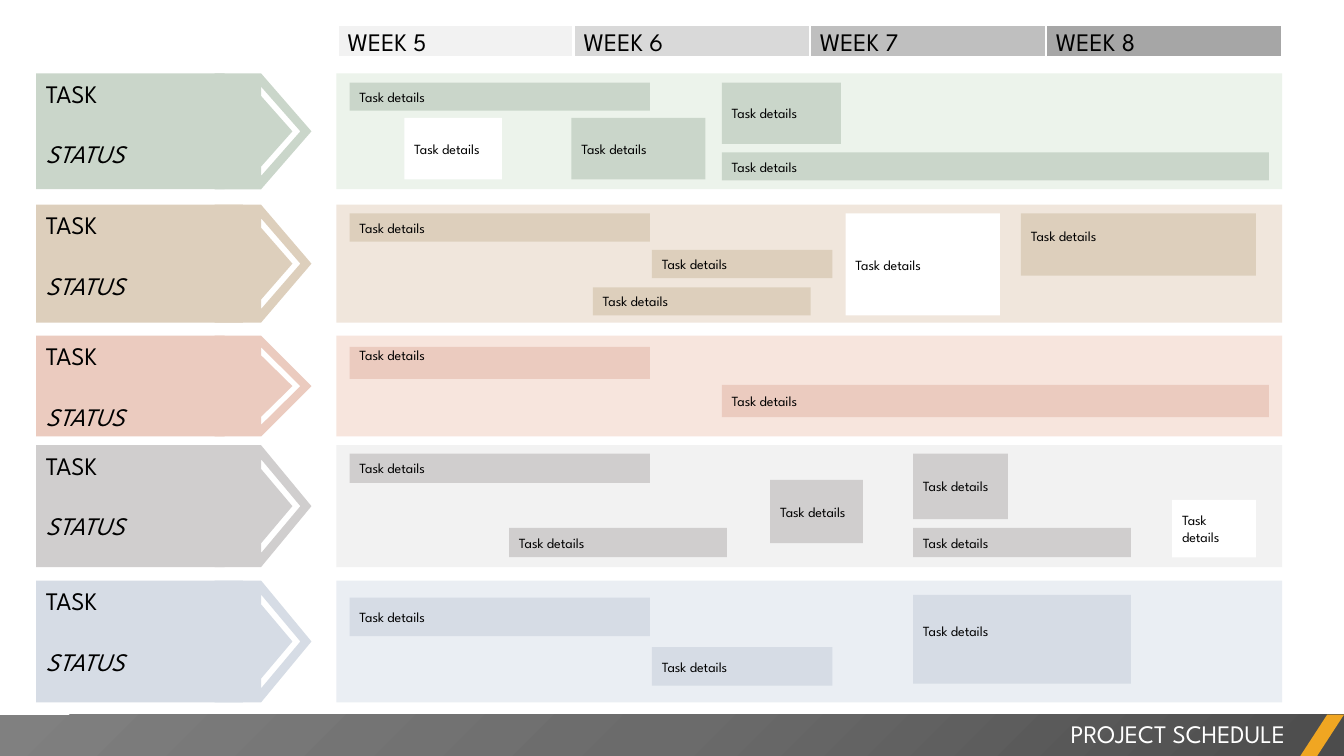
import pptx
import pptx.dml.color
import pptx.enum.shapes
import pptx.enum.text
import pptx.oxml
import pptx.oxml.ns
import pptx.util

Cm, Pt = pptx.util.Cm, pptx.util.Pt
SHAPE = pptx.enum.shapes.MSO_SHAPE
ANCHOR = pptx.enum.text.MSO_ANCHOR
ALIGN = pptx.enum.text.PP_ALIGN

FONT = "League Spartan"
TITLE = "PROJECT SCHEDULE"
TASK, STATUS, DETAILS = "TASK", "STATUS", "Task details"
WEEKS = [("WEEK 5", "F2F2F2"), ("WEEK 6", "D9D9D9"), ("WEEK 7", "BFBFBF"), ("WEEK 8", "A6A6A6")]
WHITE, BLACK, ACCENT = "FFFFFF", "000000", "F0A622"
BAR_STOPS = [(0, "4C4C4C"), (50, "6B6B6B"), (100, "808080")]

# Lane: top, height, label width, strong colour, pale colour, details.
# Detail: left, top, width, height and an optional style, "white" or "raised".
LANES = [
    (1.85, 2.92, 4.75, "CAD6CA", "ECF3EB", [
        (8.81, 2.08, 7.57, 0.71), (14.4, 2.97, 3.38, 1.55), (10.19, 2.97, 2.46, 1.55, "white"),
        (18.19, 2.08, 3, 1.55), (18.19, 3.84, 13.79, 0.71)]),
    (5.16, 2.97, 5.21, "DDCFBC", "F0E6DC", [
        (8.81, 5.38, 7.57, 0.71), (21.31, 5.38, 3.89, 2.57, "white"),
        (25.73, 5.38, 5.92, 1.57, "raised"), (16.43, 6.3, 4.55, 0.71), (14.94, 7.24, 5.49, 0.71)]),
    (8.46, 2.54, 4.75, "EBCBBF", "F7E5DD", [
        (8.81, 8.74, 7.57, 0.81, "raised"), (18.19, 9.7, 13.79, 0.81)]),
    (11.22, 3.07, 4.75, "D0CECE", "F2F2F2", [
        (8.81, 11.43, 7.57, 0.74), (29.54, 12.6, 2.11, 1.45, "white"), (23.01, 11.43, 2.39, 1.65),
        (19.41, 12.09, 2.34, 1.6), (12.83, 13.3, 5.49, 0.74), (23.01, 13.3, 5.49, 0.74)]),
    (14.63, 3.07, 5.21, "D6DCE5", "EAEEF3", [
        (8.81, 15.06, 7.57, 0.97), (16.43, 16.31, 4.55, 0.97),
        (23.01, 14.99, 5.49, 2.24, "raised")]),
]
LABEL_LEFT, PANEL_LEFT, PANEL_WIDTH = 0.91, 8.48, 23.83
# Chevron outline and its cut-out: x in cm, y as a share of the lane height
ARROW = [(6.58, 0), (5.41, 0), (5.41, 1), (6.58, 1), (7.85, 0.5)]
NOTCH = [(6.58, 0.805), (7.37, 0.5), (6.58, 0.195), (6.58, 0.115), (7.57, 0.5), (6.58, 0.885)]


def rgb(value):
    return pptx.dml.color.RGBColor.from_string(value)


def paint(shape, colour):
    shape.shadow.inherit = False
    shape.line.fill.background()
    shape.fill.solid()
    shape.fill.fore_color.rgb = rgb(colour)


def add_block(shapes, left, top, width, height, colour, kind=SHAPE.RECTANGLE):
    block = shapes.add_shape(kind, Cm(left), Cm(top), Cm(width), Cm(height))
    paint(block, colour)
    return block


def write(frame, lines, size, colour=BLACK, anchor=ANCHOR.TOP, align=ALIGN.LEFT):
    frame.word_wrap = True
    frame.vertical_anchor = anchor
    frame.text = "\n".join(lines)
    for paragraph in frame.paragraphs:
        paragraph.alignment = align
        paragraph.font.name = FONT
        paragraph.font.size = Pt(size)
        paragraph.font.color.rgb = rgb(colour)


def add_chevron(shapes, top, height, colour):
    arrow, notch = [[(Cm(x), Cm(top + y * height)) for x, y in outline]
                    for outline in (ARROW, NOTCH)]
    builder = shapes.build_freeform(*arrow[0])
    builder.add_line_segments(arrow[1:])
    builder.move_to(*notch[0])
    builder.add_line_segments(notch[1:])
    paint(builder.convert_to_shape(), colour)


def add_lane(slide, top, height, label_width, strong, pale, details):
    shapes = slide.shapes.add_group_shape().shapes
    label = add_block(shapes, LABEL_LEFT, top, label_width, height, strong).text_frame
    write(label, [TASK, STATUS], 18)
    status = label.paragraphs[1]
    status.space_before = Pt(21.5)
    status.font.italic = True
    add_chevron(shapes, top, height, strong)
    add_block(shapes, PANEL_LEFT, top, PANEL_WIDTH, height, pale)
    for left, detail_top, width, detail_height, *style in details:
        colour = WHITE if "white" in style else strong
        detail = add_block(shapes, left, detail_top, width, detail_height, colour).text_frame
        write(detail, [DETAILS], 10, anchor=ANCHOR.MIDDLE)
        if "raised" in style:
            detail.margin_bottom = Pt(15.6)


def add_borders(cell):
    properties = cell._tc.get_or_add_tcPr()
    for position, side in enumerate(("lnL", "lnR", "lnT", "lnB")):
        properties.insert(position, pptx.oxml.parse_xml(
            f'<a:{side} {pptx.oxml.ns.nsdecls("a")} w="28575"><a:solidFill>'
            f'<a:srgbClr val="{WHITE}"/></a:solidFill></a:{side}>'))


def add_weeks(slide):
    table = slide.shapes.add_table(
        1, len(WEEKS), Cm(8.51), Cm(0.61), Cm(23.8), Cm(0.84)).table
    table.first_row = table.horz_banding = False
    for cell, (week, colour) in zip(table.rows[0].cells, WEEKS):
        write(cell.text_frame, [week], 18)
        cell.vertical_anchor = ANCHOR.BOTTOM
        cell.margin_left, cell.margin_right = Cm(0.25), Cm(0.03)
        cell.margin_top, cell.margin_bottom = Cm(0.03), 0
        cell.fill.solid()
        cell.fill.fore_color.rgb = rgb(colour)
        add_borders(cell)


def add_footer(slide):
    bar = add_block(slide.shapes, 0, 18.01, 33.87, 1.04, BAR_STOPS[0][1])
    stops = "".join(f'<a:gs pos="{share * 1000}"><a:srgbClr val="{colour}"/></a:gs>'
                    for share, colour in BAR_STOPS)
    gradient = pptx.oxml.parse_xml(
        f'<a:gradFill {pptx.oxml.ns.nsdecls("a")}><a:gsLst>{stops}</a:gsLst>'
        '<a:path path="circle"><a:fillToRect l="100000" t="100000"/></a:path></a:gradFill>')
    properties = bar.element.spPr
    properties.replace(properties.find(pptx.oxml.ns.qn("a:solidFill")), gradient)
    slash = add_block(slide.shapes, 32.77, 18.01, 1.1, 1.04, ACCENT, SHAPE.PARALLELOGRAM)
    slash.adjustments[0] = 0.65

    title = slide.shapes.title
    title.left, title.top, title.width, title.height = Cm(13.34), Cm(17.98), Cm(19.3), Cm(1.02)
    write(title.text_frame, [TITLE], 18, WHITE, align=ALIGN.RIGHT)
    title.text_frame.auto_size = pptx.enum.text.MSO_AUTO_SIZE.NONE
    slide.shapes.element.append(title.element)  # bring the title in front of the bar


def main():
    deck = pptx.Presentation()
    deck.slide_width, deck.slide_height = Cm(33.87), Cm(19.05)
    slide = deck.slides.add_slide(deck.slide_layouts[5])
    for lane in LANES:
        add_lane(slide, *lane)
    add_weeks(slide)
    add_footer(slide)
    deck.save("out.pptx")


if __name__ == "__main__":
    main()
